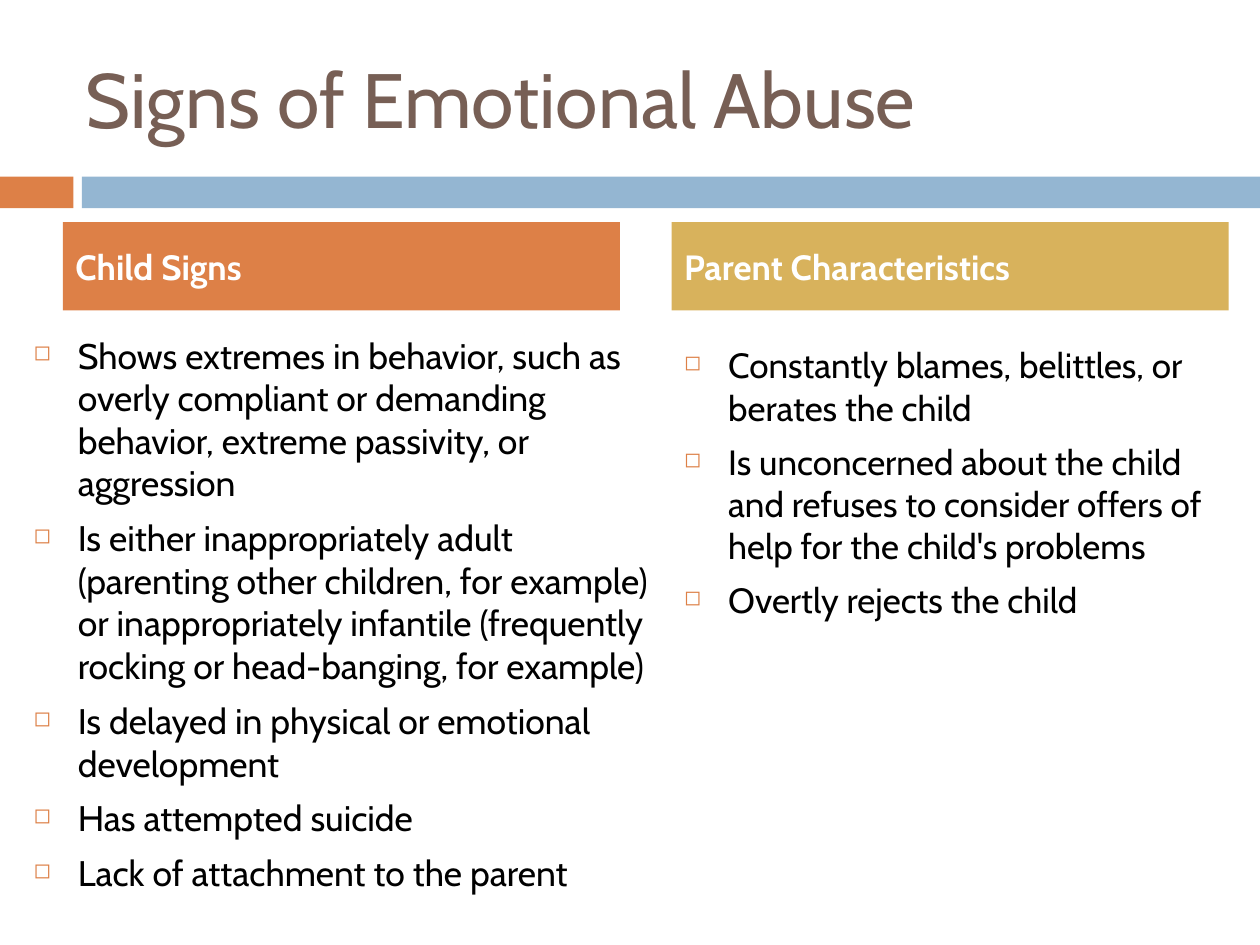
from lxml.etree import SubElement
from pptx import Presentation
from pptx.dml.color import RGBColor
from pptx.enum.shapes import MSO_SHAPE
from pptx.enum.text import MSO_ANCHOR, PP_ALIGN
from pptx.oxml.ns import qn
from pptx.util import Cm, Pt

FONT = "Cabin"
ORANGE, BLUE, GOLD = "DD8047", "94B6D2", "D8B25C"
BROWN, WHITE, BLACK = "775F55", "FFFFFF", "000000"

HEADING_TOP, HEADING_WIDTH, HEADING_HEIGHT = 4.48, 11.23, 1.78
BAND_TOP, BAND_HEIGHT = 3.56, 0.64
RIGHT_COLUMN = 13.54
BULLET_INDENT = Cm(0.89)

CHILD_SIGNS = [
    "Shows extremes in behavior, such as overly compliant or demanding behavior, "
    "extreme passivity, or aggression",
    "Is either inappropriately adult (parenting other children, for example) "
    "or inappropriately infantile (frequently rocking or head-banging, for example)",
    "Is delayed in physical or emotional development",
    "Has attempted suicide",
    "Lack of attachment to the parent",
]
PARENT_CHARACTERISTICS = [
    "Constantly blames, belittles, or berates the child",
    "Is unconcerned about the child and refuses to consider offers of help "
    "for the child's problems",
    "Overtly rejects the child",
]


def color(value):
    return RGBColor.from_string(value)


def style_paragraph(paragraph, text, size, text_color, bold=False):
    paragraph.text = text
    paragraph.alignment = PP_ALIGN.LEFT
    paragraph.font.name = FONT
    paragraph.font.size = Pt(size)
    paragraph.font.bold = bold
    paragraph.font.color.rgb = color(text_color)


def add_bar(slide, left, top, width, height, fill):
    shape = slide.shapes.add_shape(
        MSO_SHAPE.RECTANGLE, Cm(left), Cm(top), Cm(width), Cm(height))
    shape.shadow.inherit = False
    shape.fill.solid()
    shape.fill.fore_color.rgb = color(fill)
    shape.line.fill.background()
    return shape


def add_heading(slide, left, text, fill):
    shape = add_bar(slide, left, HEADING_TOP, HEADING_WIDTH, HEADING_HEIGHT, fill)
    shape.text_frame.vertical_anchor = MSO_ANCHOR.MIDDLE
    style_paragraph(shape.text_frame.paragraphs[0], text, 20, WHITE, bold=True)


def add_text_frame(slide, left, top, width, height):
    box = slide.shapes.add_textbox(Cm(left), Cm(top), Cm(width), Cm(height))
    box.text_frame.word_wrap = True
    return box.text_frame


def add_title(slide, text):
    frame = add_text_frame(slide, 1.48, 0.76, 22.66, 2.41)
    frame.vertical_anchor = MSO_ANCHOR.MIDDLE
    style_paragraph(frame.paragraphs[0], text, 44, BROWN)


def set_bullet(paragraph):
    """Give the paragraph a hanging indent and a small orange square."""
    properties = paragraph._p.get_or_add_pPr()
    properties.set("marL", str(BULLET_INDENT))
    properties.set("indent", str(-BULLET_INDENT))
    bullet_color = SubElement(properties, qn("a:buClr"))
    SubElement(bullet_color, qn("a:srgbClr"), val=ORANGE)
    SubElement(properties, qn("a:buSzPct"), val="60000")
    SubElement(properties, qn("a:buChar"), char="◻")


def add_bullet_list(slide, left, top, width, height, items, size):
    frame = add_text_frame(slide, left, top, width, height)
    for index, item in enumerate(items):
        paragraph = frame.add_paragraph() if index else frame.paragraphs[0]
        paragraph.space_before = Pt(7)
        set_bullet(paragraph)
        style_paragraph(paragraph, item, size, BLACK)


def main():
    presentation = Presentation()
    presentation.slide_width = Cm(25.4)
    presentation.slide_height = Cm(19.05)
    slide = presentation.slides.add_slide(presentation.slide_layouts[6])

    add_bar(slide, 0, BAND_TOP, 1.48, BAND_HEIGHT, ORANGE)
    add_bar(slide, 1.65, BAND_TOP, 23.75, BAND_HEIGHT, BLUE)
    add_title(slide, "Signs of Emotional Abuse")

    add_heading(slide, 1.27, "Child Signs", ORANGE)
    add_bullet_list(slide, 0.43, 6.6, 13.13, 10.34, CHILD_SIGNS, 20.3)

    add_heading(slide, RIGHT_COLUMN, "Parent Characteristics", GOLD)
    add_bullet_list(slide, RIGHT_COLUMN, 6.81, 11.43, 10.13,
                    PARENT_CHARACTERISTICS, 20)

    presentation.save("out.pptx")


if __name__ == "__main__":
    main()
